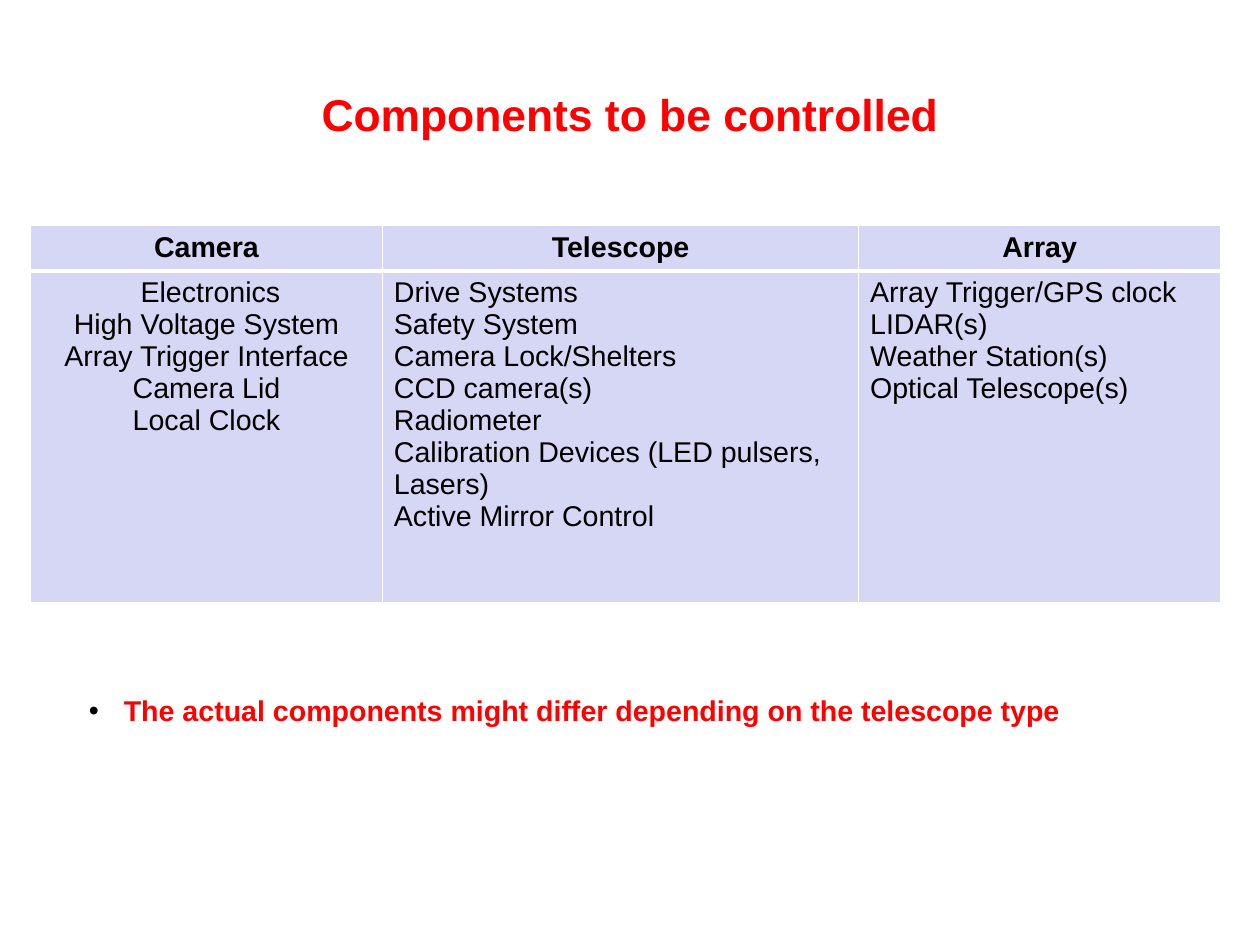
import lxml.etree
import pptx
import pptx.dml.color
import pptx.enum.text
import pptx.oxml
import pptx.oxml.ns
import pptx.util

Pt = pptx.util.Pt
ALIGN = pptx.enum.text.PP_ALIGN
RED, BLACK, WHITE, LAVENDER = "FF0000", "000000", "FFFFFF", "D6D6F5"
COMPONENTS = {
    "Camera": [" Electronics", "High Voltage System", "Array Trigger Interface",
               "Camera Lid", "Local Clock"],
    "Telescope": ["Drive Systems", "Safety System", "Camera Lock/Shelters",
                  "CCD camera(s)", "Radiometer",
                  "Calibration Devices (LED pulsers,", "Lasers)",
                  "Active Mirror Control"],
    "Array": ["Array Trigger/GPS clock", "LIDAR(s)", "Weather Station(s)",
              "Optical Telescope(s)"],
}
COLUMN_WIDTHS = [221.8, 300, 228]
ROW_HEIGHTS = [26.2, 208.6]


def rgb(color):
    return pptx.dml.color.RGBColor.from_string(color)


def apply_format(target, values):
    for name, value in values.items():
        setattr(target, name, value)


def place(placeholder, left, top, width, height):
    apply_format(placeholder, {"left": Pt(left), "top": Pt(top),
                               "width": Pt(width), "height": Pt(height)})


def write_lines(frame, lines, size, color, bold, align, spacing):
    for index, line in enumerate(lines):
        paragraph = frame.paragraphs[0] if index == 0 else frame.add_paragraph()
        apply_format(paragraph, {"alignment": align, "line_spacing": spacing,
                                 "space_before": Pt(0)})
        run = paragraph.add_run()
        run.text = line
        apply_format(run.font, {"name": "Arial", "size": Pt(size), "bold": bold})
        run.font.color.rgb = rgb(color)


def add_bullet(paragraph, color, indent):
    properties = paragraph._p.get_or_add_pPr()
    properties.set("marL", str(Pt(indent)))
    properties.set("indent", str(-Pt(indent)))
    namespace = pptx.oxml.ns.nsdecls("a")
    for markup in (f'<a:buClr {namespace}><a:srgbClr val="{color}"/></a:buClr>',
                   f'<a:buFont {namespace} typeface="Arial"/>',
                   f'<a:buChar {namespace} char="•"/>'):
        properties.append(pptx.oxml.parse_xml(markup))


def set_borders(cell, widths):
    properties = cell._tc.get_or_add_tcPr()
    for side, width in widths.items():
        line = lxml.etree.SubElement(properties, pptx.oxml.ns.qn(f"a:ln{side}"),
                                     w=str(Pt(width)))
        fill = lxml.etree.SubElement(line, pptx.oxml.ns.qn("a:solidFill"))
        lxml.etree.SubElement(fill, pptx.oxml.ns.qn("a:srgbClr"), val=WHITE)


def fill_cell(cell, lines, bold, align, borders):
    set_borders(cell, borders)
    cell.fill.solid()
    cell.fill.fore_color.rgb = rgb(LAVENDER)
    write_lines(cell.text_frame, lines, 18, BLACK, bold, align, 1.0)


def add_title(slide, text):
    title = slide.shapes.title
    place(title, 39.6, 23.8, 714.2, 99.4)
    apply_format(title.text_frame, {
        "margin_left": 0, "margin_top": 0, "margin_right": 0, "margin_bottom": 0,
        "word_wrap": True, "vertical_anchor": pptx.enum.text.MSO_ANCHOR.MIDDLE})
    write_lines(title.text_frame, [text], 28, RED, True, ALIGN.CENTER, 0.93)


def add_components_table(slide):
    table = slide.shapes.add_table(
        2, len(COMPONENTS), Pt(19.2), Pt(142), Pt(sum(COLUMN_WIDTHS)),
        Pt(sum(ROW_HEIGHTS))).table
    table.horz_banding = False
    for column, width in zip(table.columns, COLUMN_WIDTHS):
        column.width = Pt(width)
    for row, height in zip(table.rows, ROW_HEIGHTS):
        row.height = Pt(height)
    for index, (group, parts) in enumerate(COMPONENTS.items()):
        fill_cell(table.cell(0, index), [group], True, ALIGN.CENTER,
                  {"L": 1, "R": 1, "T": 1, "B": 3})
        fill_cell(table.cell(1, index), parts, False,
                  ALIGN.CENTER if group == "Camera" else ALIGN.LEFT,
                  {"L": 1, "R": 1, "T": 3, "B": 1})


def add_remark(slide, text):
    remark = slide.placeholders[1]
    place(remark, 48.8, 435, 714.2, 27.4)
    apply_format(remark.text_frame, {
        "word_wrap": True, "vertical_anchor": pptx.enum.text.MSO_ANCHOR.TOP,
        "auto_size": pptx.enum.text.MSO_AUTO_SIZE.SHAPE_TO_FIT_TEXT})
    write_lines(remark.text_frame, [text], 18, RED, True, ALIGN.LEFT, 0.93)
    add_bullet(remark.text_frame.paragraphs[0], BLACK, 22)


def main():
    """Build the slide on the components to be controlled."""
    presentation = pptx.Presentation()
    apply_format(presentation, {"slide_width": Pt(793.75),
                                "slide_height": Pt(595.25)})
    slide = presentation.slides.add_slide(presentation.slide_layouts[1])
    add_title(slide, "Components to be controlled")
    add_components_table(slide)
    add_remark(slide, "The actual components might differ depending on "
                      "the telescope type")
    presentation.save("out.pptx")


if __name__ == "__main__":
    main()
